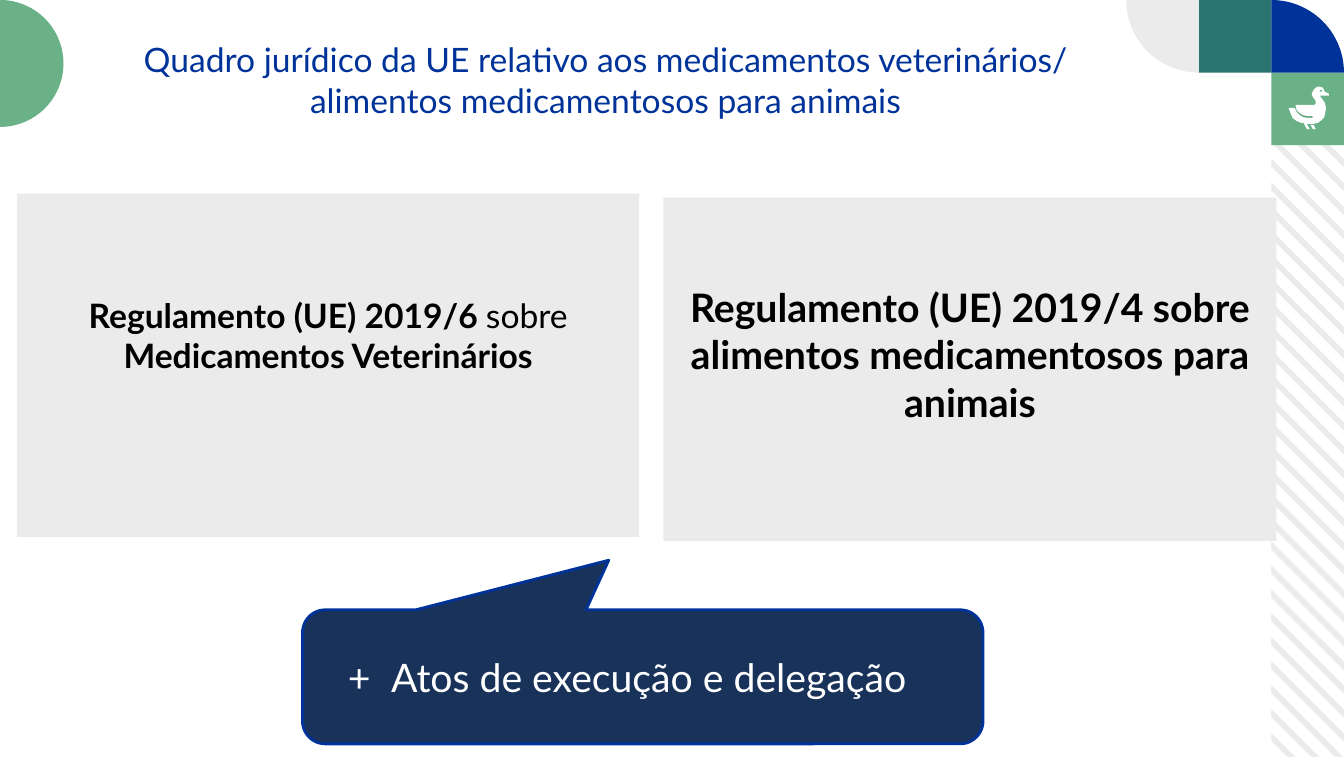
import math
from dataclasses import dataclass

import pptx
import pptx.dml.color
import pptx.enum.shapes
import pptx.enum.text
import pptx.oxml
import pptx.oxml.ns
import pptx.util

PX = 9144
WIDTH, HEIGHT = 1333, 751
TILE = 72
BAND_LEFT, BAND_TOP = WIDTH - TILE, 2 * TILE
STRIPE_COUNT, STRIPE_START, STRIPE_STEP, STRIPE_THICKNESS = 28, 86, 23.75, 8
DISC_RADIUS = 63

BLUE, NAVY, TEAL, GREEN = "003399", "18325A", "2C7470", "6BB188"
GREY, WHITE, BLACK = "ECEBEB", "FFFFFF", "000000"
FONT = "Lato"

Point = tuple[float, float]
ShapeKind = pptx.enum.shapes.MSO_SHAPE
Align = pptx.enum.text.PP_ALIGN
Anchor = pptx.enum.text.MSO_ANCHOR

DUCK_BODY = [
    (1318, 93), (1314, 91), (1313, 89), (1312, 87), (1309, 86), (1307, 86), (1305, 87),
    (1303, 89), (1302, 91), (1301, 93), (1302, 96), (1305, 100), (1305, 103), (1304, 104),
    (1285, 104), (1286, 109), (1289, 112), (1292, 114), (1296, 115), (1302, 115),
    (1302, 117), (1296, 117), (1292, 116), (1289, 114), (1286, 111), (1284, 107),
    (1278, 107), (1280, 112), (1282, 117), (1286, 120), (1291, 122), (1293, 122),
    (1296, 128), (1299, 128), (1296, 123), (1302, 123), (1307, 122), (1311, 119),
    (1313, 117), (1314, 114), (1315, 109), (1315, 106), (1314, 102), (1309, 95), (1318, 95),
]
DUCK_EYE = [(1311, 90), (1311, 91), (1309, 91), (1309, 90), (1310, 89), (1311, 89)]
DUCK_LEG = [(1305, 128), (1303, 124), (1300, 124), (1302, 128)]


@dataclass
class Box:
    left: int
    top: int
    width: int
    height: int

    def emu(self) -> tuple[int, int, int, int]:
        return self.left * PX, self.top * PX, self.width * PX, self.height * PX


@dataclass
class Panel:
    box: Box
    size: int
    bottom_inset: int
    pieces: list[tuple[str, bool]]


@dataclass
class Outline:
    contours: list[list[Point]]
    color: str


TILES = [
    (Box(WIDTH - 2 * TILE, 0, TILE, TILE), TEAL),
    (Box(BAND_LEFT, TILE, TILE, TILE), GREEN),
]

PANELS = [
    Panel(Box(17, 192, 617, 341), 24, 65, [
        ("Regulamento (UE) 2019/6 ", True),
        ("sobre", False),
        (" Medicamentos Veterinários", True),
    ]),
    Panel(Box(658, 196, 608, 341), 28, 35, [
        ("Regulamento (UE) 2019/4 sobre alimentos medicamentosos para animais", True),
    ]),
]


def rgb(color: str) -> pptx.dml.color.RGBColor:
    return pptx.dml.color.RGBColor.from_string(color)


def paint(shape, color: str) -> None:
    shape.shadow.inherit = False
    shape.fill.solid()
    shape.fill.fore_color.rgb = rgb(color)
    shape.line.fill.background()


def format_font(font, size: int, color: str, bold: bool = False) -> None:
    font.name = FONT
    font.size = pptx.util.Pt(size)
    font.bold = bold
    font.color.rgb = rgb(color)


def add_preset(slide, kind: ShapeKind, box: Box, color: str):
    shape = slide.shapes.add_shape(kind, *box.emu())
    paint(shape, color)
    return shape


def add_outline(slide, outline: Outline) -> None:
    contours = [[(round(x * PX), round(y * PX)) for x, y in contour]
                for contour in outline.contours]
    builder = slide.shapes.build_freeform(*contours[0][0])
    for index, contour in enumerate(contours):
        if index:
            builder.move_to(*contour[0])
        builder.add_line_segments(contour[1:], close=True)
    paint(builder.convert_to_shape(), outline.color)


def arc(center: Point, radius: int, start: int, end: int) -> list[Point]:
    return [(center[0] + radius * math.cos(math.radians(angle)),
             center[1] + radius * math.sin(math.radians(angle)))
            for angle in range(start, end + 1, 3)]


def stripe(offset: float) -> list[Point]:
    def edge(start: float) -> list[Point]:
        first = max(0, BAND_TOP - start)
        last = min(TILE, HEIGHT - start)
        return [(BAND_LEFT + run, start + run) for run in (first, last)]

    return edge(offset) + edge(offset + STRIPE_THICKNESS)[::-1]


def add_decoration(slide) -> None:
    stripes = [stripe(STRIPE_START + index * STRIPE_STEP) for index in range(STRIPE_COUNT)]
    add_outline(slide, Outline(stripes, GREY))
    for box, color in TILES:
        add_preset(slide, ShapeKind.RECTANGLE, box, color)
    blue_center, grey_center = (BAND_LEFT, TILE), (WIDTH - 2 * TILE, 0)
    for outline in [
        Outline([[blue_center] + arc(blue_center, TILE, 270, 360)], BLUE),
        Outline([[grey_center] + arc(grey_center, TILE, 90, 180)], GREY),
        Outline([DUCK_BODY, DUCK_EYE, DUCK_LEG], WHITE),
        Outline([arc((0, DISC_RADIUS), DISC_RADIUS, -90, 90)], GREEN),
    ]:
        add_outline(slide, outline)


def add_title(slide) -> None:
    title = slide.shapes.title
    title.left, title.top, title.width, title.height = Box(83, 34, 1035, 52).emu()
    frame = title.text_frame
    frame.text = ("Quadro jurídico da UE relativo aos medicamentos veterinários/\v"
                  "alimentos medicamentosos para animais")
    frame.word_wrap = True
    frame.auto_size = pptx.enum.text.MSO_AUTO_SIZE.NONE
    frame.vertical_anchor = Anchor.TOP
    paragraph = frame.paragraphs[0]
    paragraph.alignment = Align.CENTER
    for run in paragraph.runs:
        format_font(run.font, 24, BLUE)


def add_panel(slide, panel: Panel) -> None:
    frame = add_preset(slide, ShapeKind.RECTANGLE, panel.box, GREY).text_frame
    frame.word_wrap = True
    frame.vertical_anchor = Anchor.MIDDLE
    frame.margin_bottom = panel.bottom_inset * PX
    paragraph = frame.paragraphs[0]
    paragraph.alignment = Align.CENTER
    for text, bold in panel.pieces:
        run = paragraph.add_run()
        run.text = text
        format_font(run.font, panel.size, BLACK, bold)


def add_tab_stop(paragraph, position: int) -> None:
    properties = paragraph._p.get_or_add_pPr()
    properties.append(pptx.oxml.parse_xml(
        f'<a:tabLst {pptx.oxml.ns.nsdecls("a")}>'
        f'<a:tab pos="{position * PX}" algn="l"/></a:tabLst>'))


def add_callout(slide) -> None:
    callout = add_preset(slide, ShapeKind.ROUNDED_RECTANGULAR_CALLOUT,
                         Box(300, 605, 675, 133), NAVY)
    for index, value in enumerate((-0.05, -0.87, 0.17)):
        callout.adjustments[index] = value
    callout.line.color.rgb = rgb(BLUE)
    callout.line.width = pptx.util.Pt(2)

    frame = slide.shapes.add_textbox(*Box(327, 643, 612, 57).emu()).text_frame
    frame.word_wrap = True
    frame.margin_left = 18 * PX
    frame.text = "+\tAtos de execução e delegação"
    paragraph = frame.paragraphs[0]
    add_tab_stop(paragraph, 43)
    format_font(paragraph.runs[0].font, 28, WHITE)


def main() -> None:
    presentation = pptx.Presentation()
    presentation.slide_width, presentation.slide_height = WIDTH * PX, HEIGHT * PX
    slide = presentation.slides.add_slide(presentation.slide_layouts[5])
    add_decoration(slide)
    add_title(slide)
    for panel in PANELS:
        add_panel(slide, panel)
    add_callout(slide)
    presentation.save("out.pptx")


if __name__ == "__main__":
    main()
